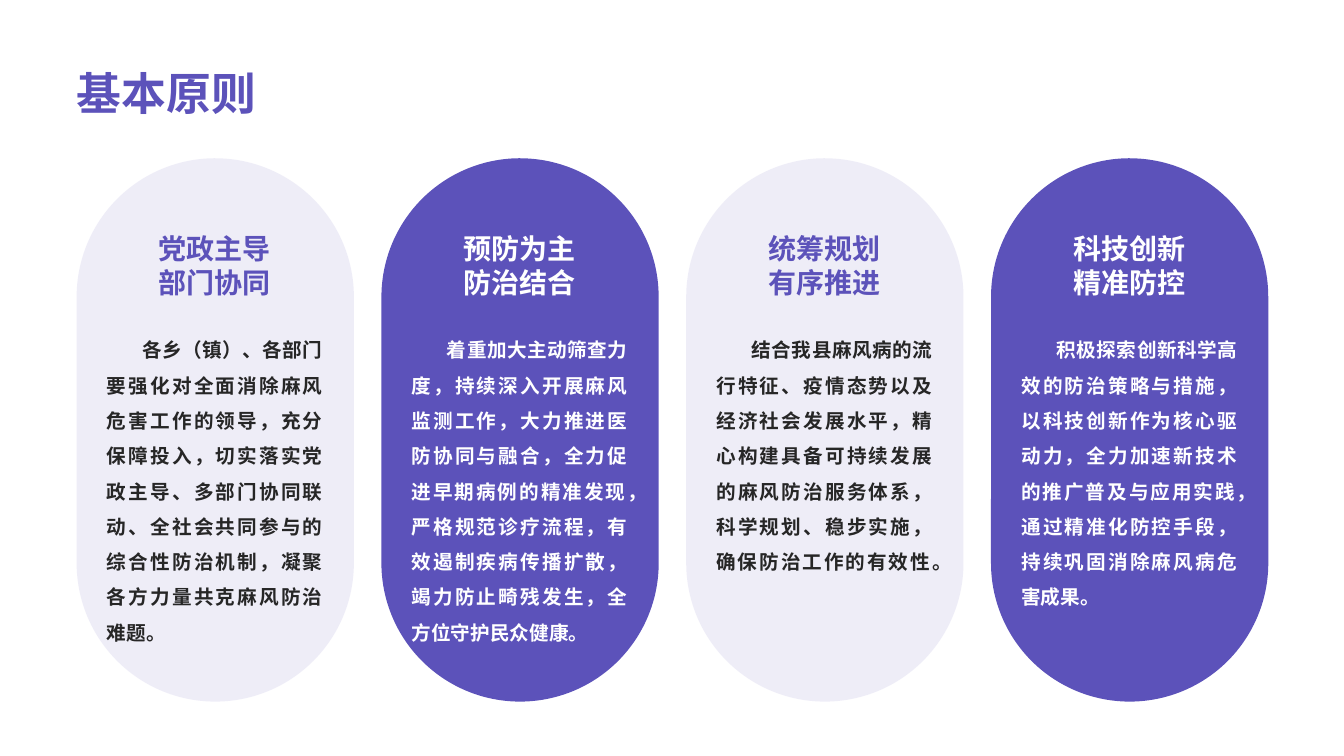
from lxml.etree import SubElement
from pptx import Presentation
from pptx.dml.color import RGBColor
from pptx.enum.shapes import MSO_SHAPE
from pptx.enum.text import MSO_ANCHOR, PP_ALIGN
from pptx.oxml.ns import qn
from pptx.util import Inches, Pt

TITLE = "基本原则"
CARDS = [
    (["党政主导", "部门协同"],
     "各乡（镇）、各部门要强化对全面消除麻风危害工作的领导，充分保障投入，切实落实党政主导、"
     "多部门协同联动、全社会共同参与的综合性防治机制，凝聚各方力量共克麻风防治难题。"),
    (["预防为主", "防治结合"],
     "着重加大主动筛查力度，持续深入开展麻风监测工作，大力推进医防协同与融合，全力促进早期病例的精准发现，"
     "严格规范诊疗流程，有效遏制疾病传播扩散，竭力防止畸残发生，全方位守护民众健康。"),
    (["统筹规划", "有序推进"],
     "结合我县麻风病的流行特征、疫情态势以及经济社会发展水平，精心构建具备可持续发展的麻风防治服务体系，"
     "科学规划、稳步实施，确保防治工作的有效性。"),
    (["科技创新", "精准防控"],
     "积极探索创新科学高效的防治策略与措施，以科技创新作为核心驱动力，全力加速新技术的推广普及与应用实践，"
     "通过精准化防控手段，持续巩固消除麻风病危害成果。"),
]
COLORS = {"purple": "5C52BA", "pale": "BEBAE3", "dark": "262626", "white": "FFFFFF"}
FONT = "Noto Sans CJK SC"
LEFT, TOP, WIDE, HIGH, STEP = 0.76, 1.57, 2.75, 5.39, 3.023
INSET, INNER = 0.3, 2.14


def put_text(slide, box, lines, size, color, font=FONT, align=PP_ALIGN.LEFT,
             anchor=MSO_ANCHOR.TOP, pads=(0, 0, 0, 0), space=None, indent=0):
    frame = slide.shapes.add_textbox(*map(Inches, box)).text_frame
    frame.word_wrap = True
    frame.vertical_anchor = anchor
    (frame.margin_left, frame.margin_top,
     frame.margin_right, frame.margin_bottom) = map(Inches, pads)
    for i, line in enumerate(lines):
        para = frame.add_paragraph() if i else frame.paragraphs[0]
        para.alignment = align
        para.line_spacing = space
        if indent:
            para._p.get_or_add_pPr().set("indent", str(Inches(indent)))
        run = para.add_run()
        run.text = line
        run.font.size = Pt(size)
        run.font.bold = True
        run.font.color.rgb = RGBColor.from_string(COLORS[color])
        run.font.name = font
        SubElement(run._r.get_or_add_rPr(), qn("a:ea"), typeface=FONT)


def put_pill(slide, left, color, alpha=None):
    pill = slide.shapes.add_shape(
        MSO_SHAPE.ROUNDED_RECTANGLE, *map(Inches, (left, TOP, WIDE, HIGH)))
    pill.adjustments[0] = 0.5
    pill.shadow.inherit = False
    pill.line.fill.background()
    pill.fill.solid()
    pill.fill.fore_color.rgb = RGBColor.from_string(COLORS[color])
    if alpha:
        tint = pill._element.spPr.find(qn("a:solidFill"))[0]
        SubElement(tint, qn("a:alpha"), val=str(alpha * 1000))


def main():
    """Build the slide of four principles."""
    deck = Presentation()
    deck.slide_width, deck.slide_height = Inches(13.33), Inches(7.5)
    slide = deck.slides.add_slide(deck.slide_layouts[6])
    put_text(slide, (LEFT, 0.39, 11.81, 0.79), [TITLE], 32, "purple",
             font="Arial", anchor=MSO_ANCHOR.BOTTOM)
    for i, (heads, body) in enumerate(CARDS):
        left = LEFT + i * STEP
        if i % 2:
            put_pill(slide, left, "purple")
            head, ink = "white", "white"
        else:
            put_pill(slide, left, "pale", alpha=25)
            head, ink = "purple", "dark"
        put_text(slide, (left + INSET, 3.24, INNER, 2.99), [body], 14, ink,
                 align=PP_ALIGN.JUSTIFY, space=1.5, indent=0.35)
        put_text(slide, (left + INSET, 2.17, INNER, 0.87), heads, 20, head,
                 align=PP_ALIGN.CENTER, anchor=MSO_ANCHOR.MIDDLE,
                 pads=(0.1, 0.05, 0.1, 0))
    deck.save("out.pptx")


if __name__ == "__main__":
    main()
